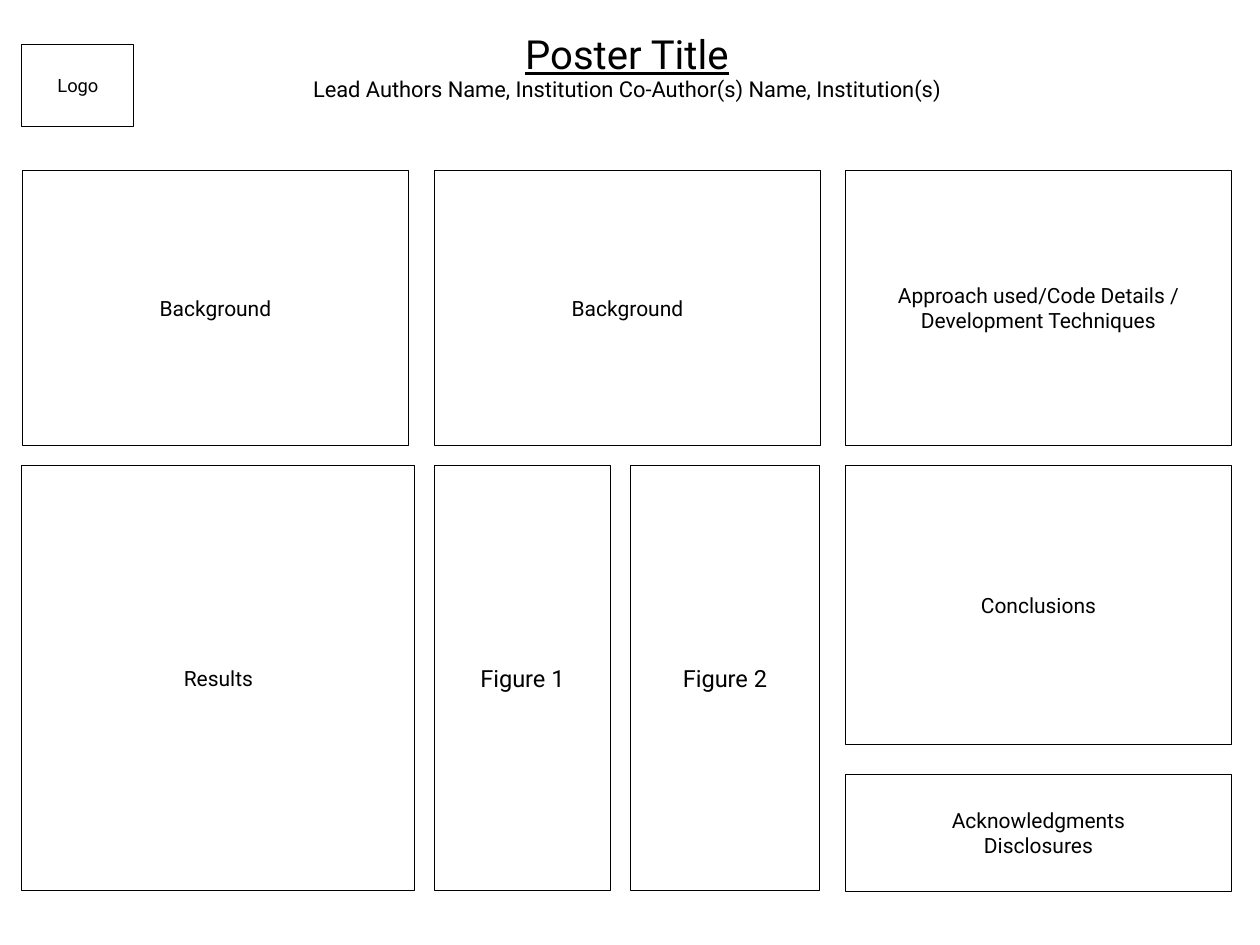
from pptx import Presentation
from pptx.dml.color import RGBColor
from pptx.enum.shapes import MSO_SHAPE
from pptx.enum.text import MSO_ANCHOR, PP_ALIGN
from pptx.util import Pt

RECTANGLE = MSO_SHAPE.RECTANGLE
MIDDLE, BOTTOM = MSO_ANCHOR.MIDDLE, MSO_ANCHOR.BOTTOM
CENTER = PP_ALIGN.CENTER
BLACK = RGBColor(0, 0, 0)
WHITE = RGBColor(255, 255, 255)
FONT = "Roboto"
EMU_PER_PX = 914400 / 126

TITLE = "Poster Title"
AUTHORS = "Lead Authors Name, Institution Co-Author(s) Name, Institution(s)"

LEFT, MIDDLE_LEFT, RIGHT_LEFT = 22, 434, 845
COLUMN_WIDTH = 387
UPPER_TOP, UPPER_HEIGHT = 170, 276
LOWER_TOP, LOWER_BOTTOM = 465, 891
LOWER_HEIGHT = LOWER_BOTTOM - LOWER_TOP
ACKNOWLEDGMENTS_TOP = 774

UPPER_PANELS = [
    (LEFT, ["Background"]),
    (MIDDLE_LEFT, ["Background"]),
    (RIGHT_LEFT, ["Approach used/Code Details / Development Techniques"]),
]
PANELS = [
    (["Results"], (LEFT, LOWER_TOP, 393, LOWER_HEIGHT), 12, WHITE),
    (["Logo"], (LEFT, 44, 112, 82), 10.5, None),
    (["Figure 1"], (MIDDLE_LEFT, LOWER_TOP, 177, LOWER_HEIGHT), 13.5, None),
    (["Figure 2"], (630, LOWER_TOP, 190, LOWER_HEIGHT), 13.5, None),
    (["Conclusions"], (RIGHT_LEFT, LOWER_TOP, COLUMN_WIDTH, 280), 12, WHITE),
    (["Acknowledgments", "Disclosures"],
     (RIGHT_LEFT, ACKNOWLEDGMENTS_TOP, COLUMN_WIDTH, LOWER_BOTTOM - ACKNOWLEDGMENTS_TOP),
     12, WHITE),
] + [
    (lines, (left, UPPER_TOP, COLUMN_WIDTH, UPPER_HEIGHT), 12, WHITE)
    for left, lines in UPPER_PANELS
]


def px(value):
    return round(value * EMU_PER_PX)


def add_run(paragraph, text, size, underline=False):
    run = paragraph.add_run()
    run.text = text
    run.font.name = FONT
    run.font.size = Pt(size)
    run.font.underline = underline
    run.font.color.rgb = BLACK


def add_heading(slide):
    frame = slide.shapes.add_textbox(px(LEFT), px(19), px(1210), px(89)).text_frame
    frame.word_wrap = True
    frame.vertical_anchor = BOTTOM
    paragraph = frame.paragraphs[0]
    paragraph.alignment = CENTER
    paragraph.line_spacing = 0.9
    add_run(paragraph, TITLE, 22.9, underline=True)
    paragraph.add_line_break()
    add_run(paragraph, AUTHORS, 12.5)


def add_panel(slide, lines, box, size, fill):
    shape = slide.shapes.add_shape(RECTANGLE, *map(px, box))
    shape.shadow.inherit = False
    if fill is None:
        shape.fill.background()
    else:
        shape.fill.solid()
        shape.fill.fore_color.rgb = fill
    shape.line.color.rgb = BLACK
    shape.line.width = Pt(0.5)
    frame = shape.text_frame
    frame.word_wrap = True
    frame.vertical_anchor = MIDDLE
    frame.margin_left = frame.margin_right = px(9)
    frame.margin_top = frame.margin_bottom = px(5)
    for index, text in enumerate(lines):
        paragraph = frame.add_paragraph() if index else frame.paragraphs[0]
        paragraph.alignment = CENTER
        add_run(paragraph, text, size)


def main():
    presentation = Presentation()
    presentation.slide_width = px(1260)
    presentation.slide_height = px(945)
    slide = presentation.slides.add_slide(presentation.slide_layouts[6])
    add_heading(slide)
    for panel in PANELS:
        add_panel(slide, *panel)
    presentation.save("out.pptx")


if __name__ == "__main__":
    main()
